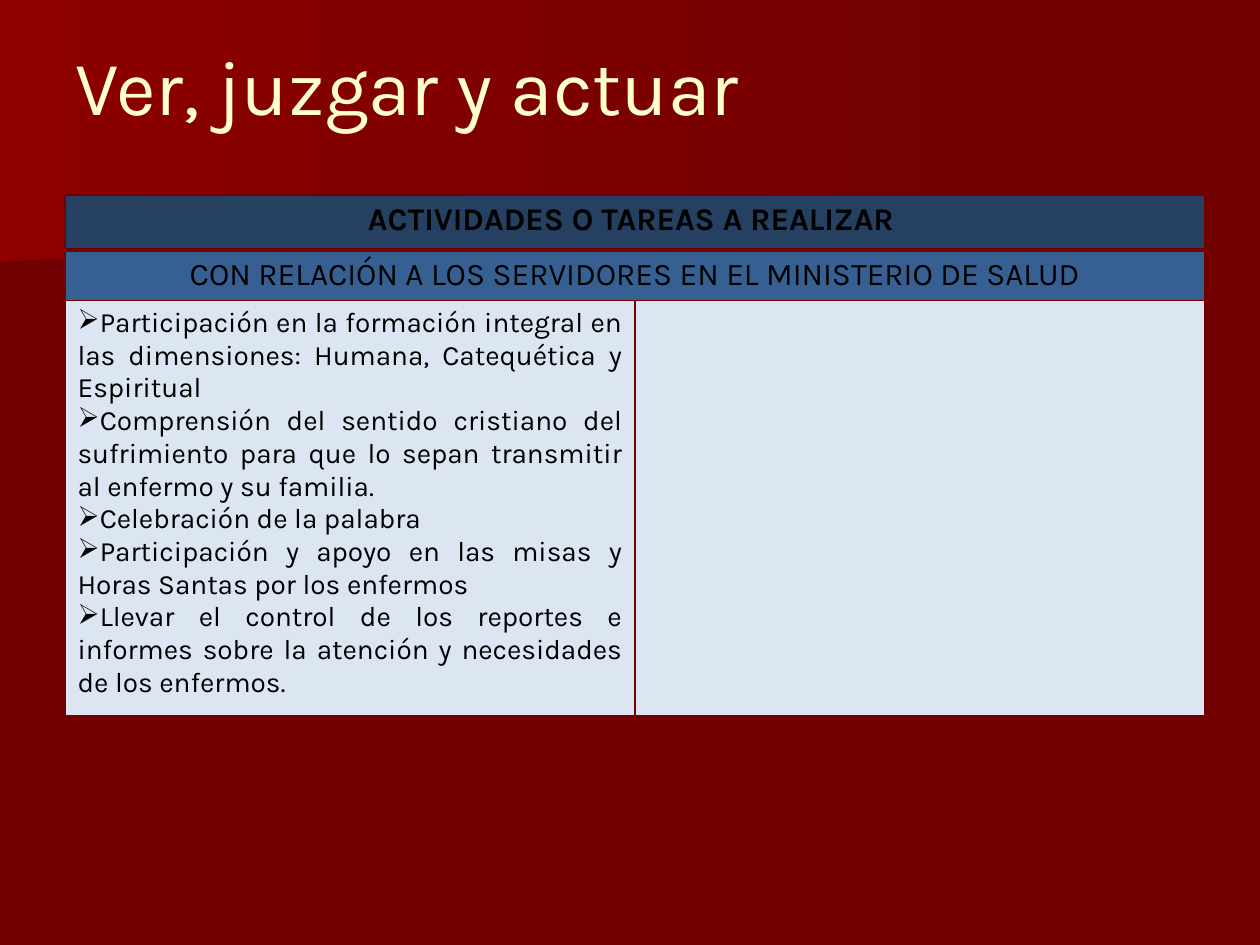
from typing import NamedTuple

from lxml import etree
from pptx import Presentation
from pptx.dml.color import RGBColor
from pptx.enum.text import MSO_ANCHOR, PP_ALIGN
from pptx.oxml.ns import qn
from pptx.util import Pt

MIDDLE = MSO_ANCHOR.MIDDLE
LEFT, CENTER, JUSTIFY = PP_ALIGN.LEFT, PP_ALIGN.CENTER, PP_ALIGN.JUSTIFY
SCALE = 914400 / 126
FONT = "Karla"
BACK = "720000"
PALE = "DCE6F2"
BLACK = "000000"


class Band(NamedTuple):
    points: list[tuple[int, int]]
    start: str


class Row(NamedTuple):
    height: int
    fill: str
    lines: list[str]
    size: int
    bold: bool
    align: PP_ALIGN
    bullet: str
    top: int
    bottom: int


BANDS = [
    Band([(980, 193), (0, 273), (0, 127), (982, 127)], "6F0000"),
    Band([(998, 204), (0, 262), (0, 0), (998, 0)], "8C0000"),
]
TASKS = [
    "Participación en la formación integral en las dimensiones: "
    "Humana, Catequética y Espiritual",
    "Comprensión del sentido cristiano del sufrimiento para que lo sepan "
    "transmitir al enfermo y su familia.",
    "Celebración de la palabra",
    "Participación y apoyo en las misas y Horas Santas por los enfermos",
    "Llevar el control de los reportes e informes sobre la atención y "
    "necesidades de los enfermos.",
]
ROWS = [
    Row(55, "254061", ["ACTIVIDADES O TAREAS A REALIZAR "],
        18, True, CENTER, "", 1, 3),
    Row(50, "376092",
        ["CON RELACIÓN A LOS SERVIDORES EN EL MINISTERIO DE SALUD"],
        18, False, CENTER, "", 3, 1),
    Row(405, PALE, TASKS, 16, False, JUSTIFY, "➢", 1, 1),
]


def px(count: int) -> int:
    return round(count * SCALE)


def color(code: str) -> RGBColor:
    return RGBColor.from_string(code)


def write(frame, lines: list[str], size: int, code: str, bold: bool,
          align: PP_ALIGN, bullet: str = "") -> None:
    frame.text = "\n".join(lines)
    for para in frame.paragraphs:
        para.alignment = align
        if bullet:
            props = para._p.get_or_add_pPr()
            props.set("marL", "0")
            props.set("indent", "0")
            etree.SubElement(props, qn("a:buChar"), char=bullet)
        for run in para.runs:
            run.font.name = FONT
            run.font.size = Pt(size)
            run.font.bold = bold
            run.font.color.rgb = color(code)


def draw_band(slide, band: Band) -> None:
    first, *rest = [(px(x), px(y)) for x, y in band.points]
    path = slide.shapes.build_freeform(*first)
    path.add_line_segments(rest, close=True)
    shape = path.convert_to_shape()
    shape.shadow.inherit = False
    shape.line.fill.background()
    shape.fill.gradient()
    shape.fill.gradient_angle = 0
    for stop, code in zip(shape.fill.gradient_stops, (band.start, BACK)):
        stop.color.rgb = color(code)


def draw_edges(cell, top: int, bottom: int) -> None:
    """Set the cell's borders, which must come before its fill."""
    props = cell._tc.get_or_add_tcPr()
    widths = {"lnL": 1, "lnR": 1, "lnT": top, "lnB": bottom}
    for place, (tag, width) in enumerate(widths.items()):
        line = etree.Element(qn(f"a:{tag}"), w=str(Pt(width)))
        fill = etree.SubElement(line, qn("a:solidFill"))
        etree.SubElement(fill, qn("a:srgbClr"), val=BACK)
        props.insert(place, line)


def draw_table(slide, rows: list[Row]) -> None:
    total = sum(row.height for row in rows)
    table = slide.shapes.add_table(
        len(rows), 2, px(65), px(195), px(1140), px(total)).table
    table.first_row = table.horz_banding = False
    for index, row in enumerate(rows):
        table.rows[index].height = px(row.height)
        cells = [table.cell(index, col) for col in range(2)]
        for cell in cells:
            cell.fill.solid()
            cell.fill.fore_color.rgb = color(row.fill)
            draw_edges(cell, row.top, row.bottom)
        if row.align == CENTER:
            cells[0].merge(cells[1])
        write(cells[0].text_frame, row.lines, row.size, BLACK,
              row.bold, row.align, row.bullet)


def main() -> None:
    deck = Presentation()
    deck.slide_width, deck.slide_height = px(1260), px(945)
    slide = deck.slides.add_slide(deck.slide_layouts[6])
    slide.background.fill.solid()
    slide.background.fill.fore_color.rgb = color(BACK)
    for band in BANDS:
        draw_band(slide, band)
    title = slide.shapes.add_textbox(px(63), px(6), px(1134), px(158))
    frame = title.text_frame
    frame.word_wrap = True
    frame.vertical_anchor = MIDDLE
    write(frame, ["Ver, juzgar y actuar"], 44, "FFFFCC", False, LEFT)
    draw_table(slide, ROWS)
    deck.save("out.pptx")


if __name__ == "__main__":
    main()
